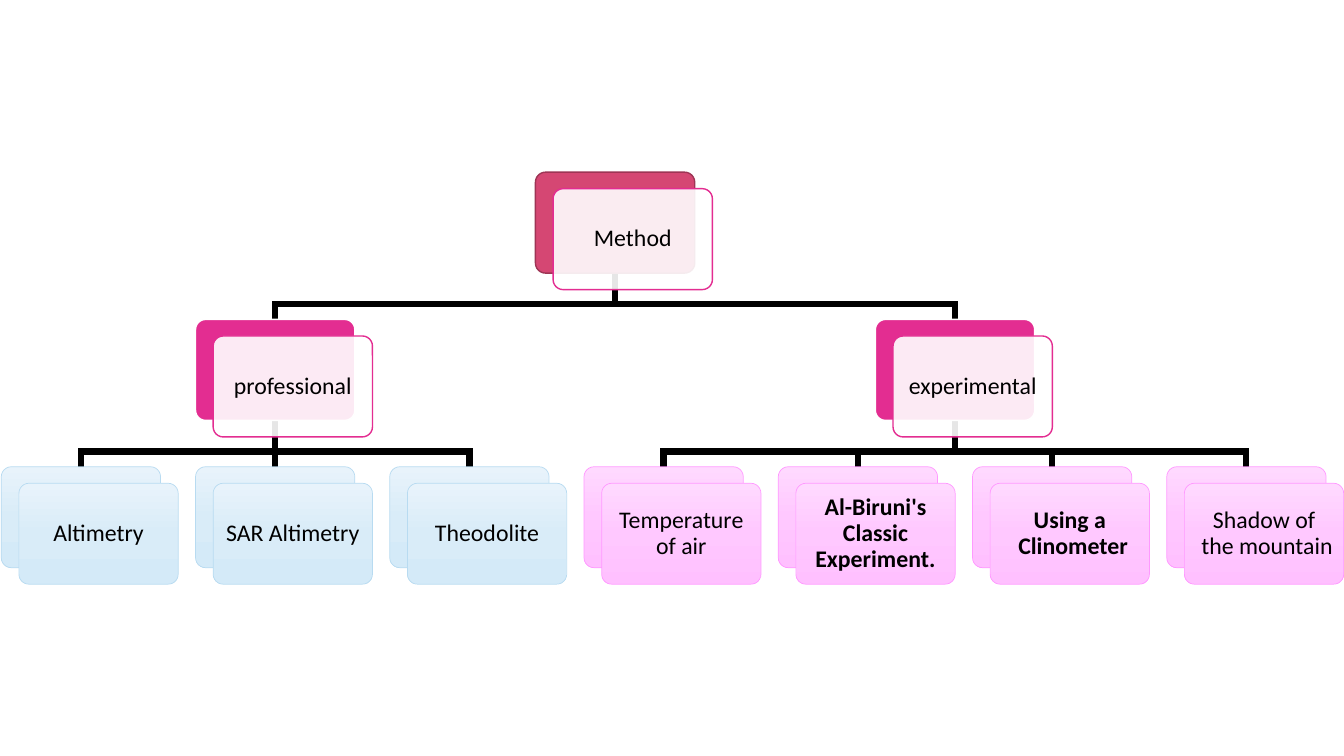
import copy

import pptx
import pptx.dml.color
import pptx.enum.shapes
import pptx.enum.text
import pptx.oxml.ns
import pptx.util
from lxml import etree

Pt = pptx.util.Pt
SIZE = (960, 540)
CARD = (113.8, 72.1)
SHIFT = (12.6, 11.8)
PITCH = (138.75, 105.2)
START = (0.9, 123)
BEND = 10.8
WHITE, BLACK, PINK = "FFFFFF", "000000", "E32D91"

ROOT = {"back": "D54773", "edge": "9E3555"}
BRANCH = {"back": PINK, "edge": WHITE}
BLUE = {"stops": ("E8F3FB", "D9ECF8", "D4EAF8"), "edge": "B8DBF1"}
ROSE = {"stops": ("FFD9FF", "FFC8FF", "FFC0FF"), "edge": "FF99FF"}

TREE = [
    ("professional", BLUE, [
        ("Altimetry", False, True),
        ("SAR Altimetry", False, True),
        ("Theodolite", False, True),
    ]),
    ("experimental", ROSE, [
        ("Temperature of air", False, True),
        ("Al-Biruni's Classic Experiment.", True, False),
        ("Using a Clinometer ", True, True),
        ("Shadow of the mountain ", False, True),
    ]),
]


def tint(color, value):
    """Give a colour format a hex value."""
    color.rgb = pptx.dml.color.RGBColor.from_string(value)


def apply(target, values):
    """Set attributes from a dict of format values."""
    for name, value in values.items():
        setattr(target, name, value)


def sub(parent, tag, **values):
    """Add a drawing element to a parent."""
    return etree.SubElement(parent, pptx.oxml.ns.qn(tag), values)


def paint(shape, value):
    """Fill a shape with one colour."""
    shape.fill.solid()
    tint(shape.fill.fore_color, value)


def blend(shape, stops):
    """Fill a shape with a downward gradient of three stops."""
    fill = shape.fill
    fill.gradient()
    fill.gradient_angle = 270
    first = shape.element.spPr.find(".//" + pptx.oxml.ns.qn("a:gs"))
    first.addnext(copy.deepcopy(first))
    for stop, place, value in zip(fill.gradient_stops, (0, 0.5, 1), stops):
        stop.position = place
        tint(stop.color, value)


def plate(slide, left, top, edge, width):
    """Add an outlined round plate."""
    kind = pptx.enum.shapes.MSO_SHAPE.ROUNDED_RECTANGLE
    shape = slide.shapes.add_shape(kind, *map(Pt, (left, top, *CARD)))
    shape.adjustments[0] = 0.1
    shape.shadow.inherit = False
    shape.line.width = Pt(width)
    tint(shape.line.color, edge)
    return shape


def write(shape, text, bold, rtl):
    """Write a centred label on a plate."""
    frame = shape.text_frame
    sides = ("left", "right", "top", "bottom")
    apply(frame, {"margin_" + side: Pt(5) for side in sides})
    apply(frame, {"word_wrap": True,
                  "vertical_anchor": pptx.enum.text.MSO_ANCHOR.MIDDLE})
    para = frame.paragraphs[0]
    apply(para, {"alignment": pptx.enum.text.PP_ALIGN.CENTER,
                 "line_spacing": 0.9})
    if rtl:
        para._p.get_or_add_pPr().set("rtl", "1")
    run = para.add_run()
    run.text = text
    apply(run.font, {"name": "Calibri", "size": Pt(17), "bold": bold})
    tint(run.font.color, BLACK)


def card(slide, spot, text, look, bold=False, rtl=True):
    """Draw a back plate and a shifted front plate with its label."""
    left, top = spot
    leaf = "stops" in look
    width = 0.5 if leaf else 1
    back = plate(slide, left, top, look["edge"], width)
    front = plate(slide, left + SHIFT[0], top + SHIFT[1],
                  look["edge"] if leaf else PINK, width)
    if leaf:
        for shape in (back, front):
            blend(shape, look["stops"])
    else:
        paint(back, look["back"])
        paint(front, WHITE)
        shade = front.element.spPr.find(".//" + pptx.oxml.ns.qn("a:srgbClr"))
        sub(shade, "a:alpha", val="90000")
    write(front, text, bold, rtl)


def link(slide, above, below):
    """Join the foot of one card to the head of another."""
    x, y = above[0] + CARD[0] / 2, above[1] + CARD[1]
    end, foot = below[0] + CARD[0] / 2, below[1]
    if abs(end - x) < 0.1:
        kind = pptx.enum.shapes.MSO_CONNECTOR.STRAIGHT
        line = slide.shapes.add_connector(kind, *map(Pt, (x, y, x, foot)))
        sub(line.element.spPr, "a:effectLst")
    else:
        path = slide.shapes.build_freeform(Pt(x), Pt(y))
        turn = foot - BEND
        points = [(x, turn), (end, turn), (end, foot)]
        path.add_line_segments([tuple(map(Pt, p)) for p in points], close=False)
        line = path.convert_to_shape()
        line.fill.background()
        line.shadow.inherit = False
    line.line.width = Pt(4.5)
    tint(line.line.color, BLACK)
    sub(line.line._get_or_add_ln(), "a:miter", lim="800000")


def chart(slide, left, top):
    """Lay out the tree from its leaves up, links behind cards."""
    def spot(col, row):
        return left + col * PITCH[0], top + row * PITCH[1]

    cards, links, heads, col = [], [], [], 0
    for name, look, leaves in TREE:
        mid = col + (len(leaves) - 1) / 2
        heads.append(mid)
        cards.append((spot(mid, 1), name, BRANCH))
        for text, bold, rtl in leaves:
            cards.append((spot(col, 2), text, look, bold, rtl))
            links.append((spot(mid, 1), spot(col, 2)))
            col += 1
    crown = spot(sum(heads) / len(heads), 0)
    links += [(crown, spot(mid, 1)) for mid in heads]
    for pair in links:
        link(slide, *pair)
    for item in [(crown, "Method", ROOT)] + cards:
        card(slide, *item)


def main():
    """Build and save the deck."""
    deck = pptx.Presentation()
    apply(deck, dict(zip(("slide_width", "slide_height"), map(Pt, SIZE))))
    slide = deck.slides.add_slide(deck.slide_layouts[6])
    chart(slide, *START)
    deck.save("out.pptx")


if __name__ == "__main__":
    main()
